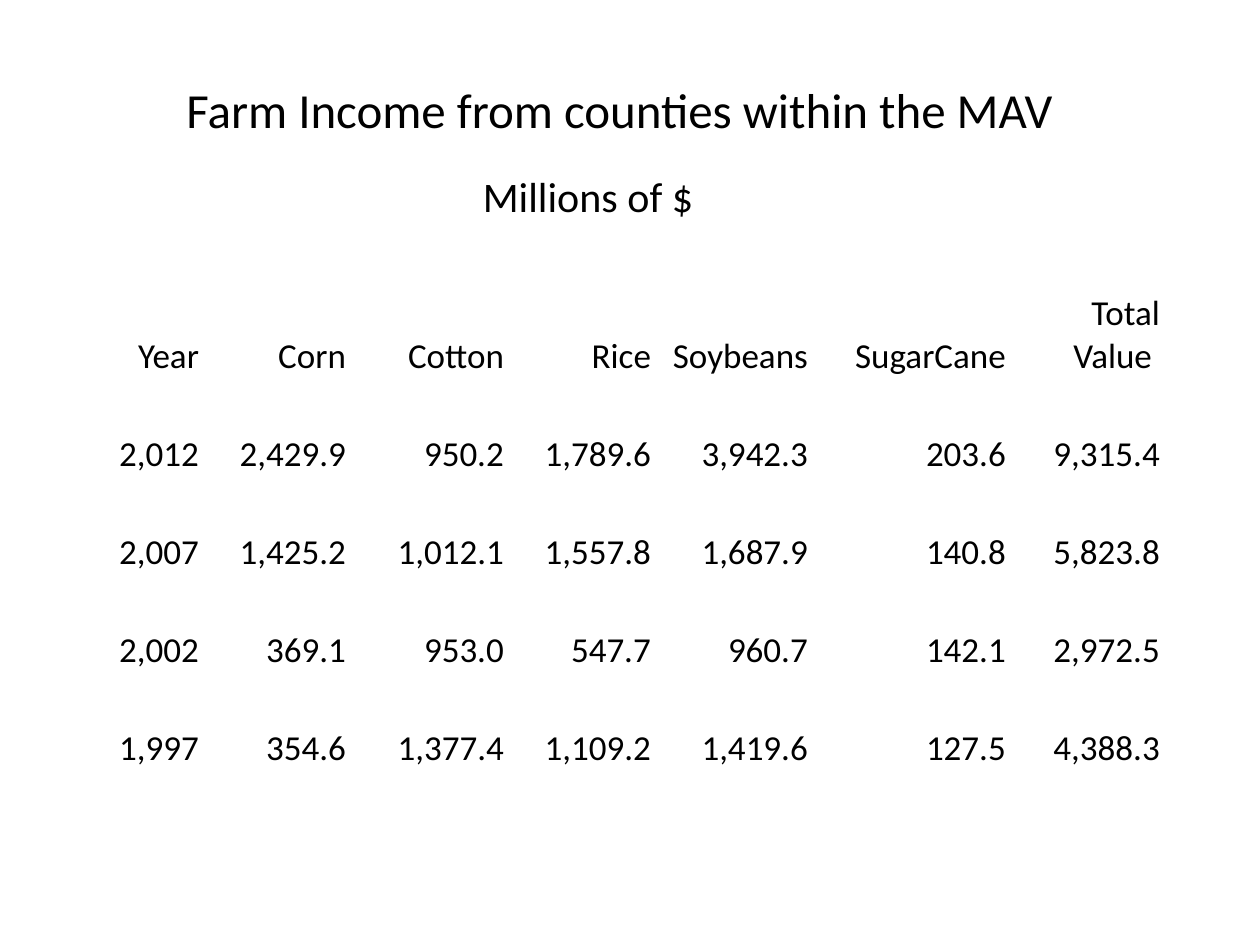
"""Build a slide with a table of farm income by crop and year."""
from dataclasses import dataclass

from pptx import Presentation
from pptx.dml.color import RGBColor
from pptx.enum.text import MSO_ANCHOR, MSO_AUTO_SIZE, PP_ALIGN
from pptx.slide import Slide
from pptx.text.text import TextFrame
from pptx.util import Emu, Pt

EMU_PER_PX = 914400 / 126
BLACK = "000000"
WHITE = "FFFFFF"


@dataclass(frozen=True)
class Heading:
    text: str
    left: int
    top: int
    width: int
    height: int
    size: int


HEADINGS = (
    Heading("Farm Income from counties within the MAV", 147, 73, 945, 72, 28),
    Heading("Millions of $", 357, 164, 462, 63, 24),
)
INCOME = (
    ("Year", "Corn", "Cotton", "Rice", "Soybeans", "SugarCane", "Total Value "),
    ("2,012", "2,429.9", "950.2", "1,789.6", "3,942.3", "203.6", "9,315.4"),
    ("2,007", "1,425.2", "1,012.1", "1,557.8", "1,687.9", "140.8", "5,823.8"),
    ("2,002", "369.1", "953.0", "547.7", "960.7", "142.1", "2,972.5"),
    ("1,997", "354.6", "1,377.4", "1,109.2", "1,419.6", "127.5", "4,388.3"),
)
COLUMN_WIDTHS = (121, 147, 158, 147, 157, 198, 154)
HEADER_HEIGHT, YEAR_HEIGHT = 147, 98
ROW_HEIGHTS = (HEADER_HEIGHT,) + (YEAR_HEIGHT,) * (len(INCOME) - 1)


def px(length: int) -> Emu:
    return Emu(round(length * EMU_PER_PX))


def color(code: str) -> RGBColor:
    return RGBColor.from_string(code)


def write(frame: TextFrame, text: str, *, size: int, align: PP_ALIGN) -> None:
    frame.word_wrap = True
    paragraph = frame.paragraphs[0]
    paragraph.alignment = align
    run = paragraph.add_run()
    run.text = text
    run.font.name = "Calibri"
    run.font.size = Pt(size)
    run.font.color.rgb = color(BLACK)


def draw_heading(slide: Slide, heading: Heading) -> None:
    frame = slide.shapes.add_textbox(
        px(heading.left), px(heading.top), px(heading.width), px(heading.height)
    ).text_frame
    frame.auto_size = MSO_AUTO_SIZE.SHAPE_TO_FIT_TEXT
    write(frame, heading.text, size=heading.size, align=PP_ALIGN.CENTER)


def draw_income(slide: Slide, left: int, top: int) -> None:
    income = slide.shapes.add_table(
        len(INCOME), len(COLUMN_WIDTHS), px(left), px(top),
        px(sum(COLUMN_WIDTHS)), px(sum(ROW_HEIGHTS)),
    ).table
    income.first_row = income.horz_banding = False
    for column, width in zip(income.columns, COLUMN_WIDTHS):
        column.width = px(width)
    for row, height, entries in zip(income.rows, ROW_HEIGHTS, INCOME):
        row.height = px(height)
        for cell, entry in zip(row.cells, entries):
            cell.fill.background()
            cell.vertical_anchor = MSO_ANCHOR.BOTTOM
            cell.margin_left = cell.margin_top = cell.margin_right = px(1)
            cell.margin_bottom = 0
            write(cell.text_frame, entry, size=20, align=PP_ALIGN.RIGHT)


def main() -> None:
    deck = Presentation()
    deck.slide_width, deck.slide_height = px(1260), px(945)
    slide = deck.slides.add_slide(deck.slide_layouts[6])
    slide.background.fill.solid()
    slide.background.fill.fore_color.rgb = color(WHITE)
    title, unit = HEADINGS
    draw_heading(slide, title)
    draw_income(slide, 79, 231)
    draw_heading(slide, unit)
    deck.save("out.pptx")


if __name__ == "__main__":
    main()
